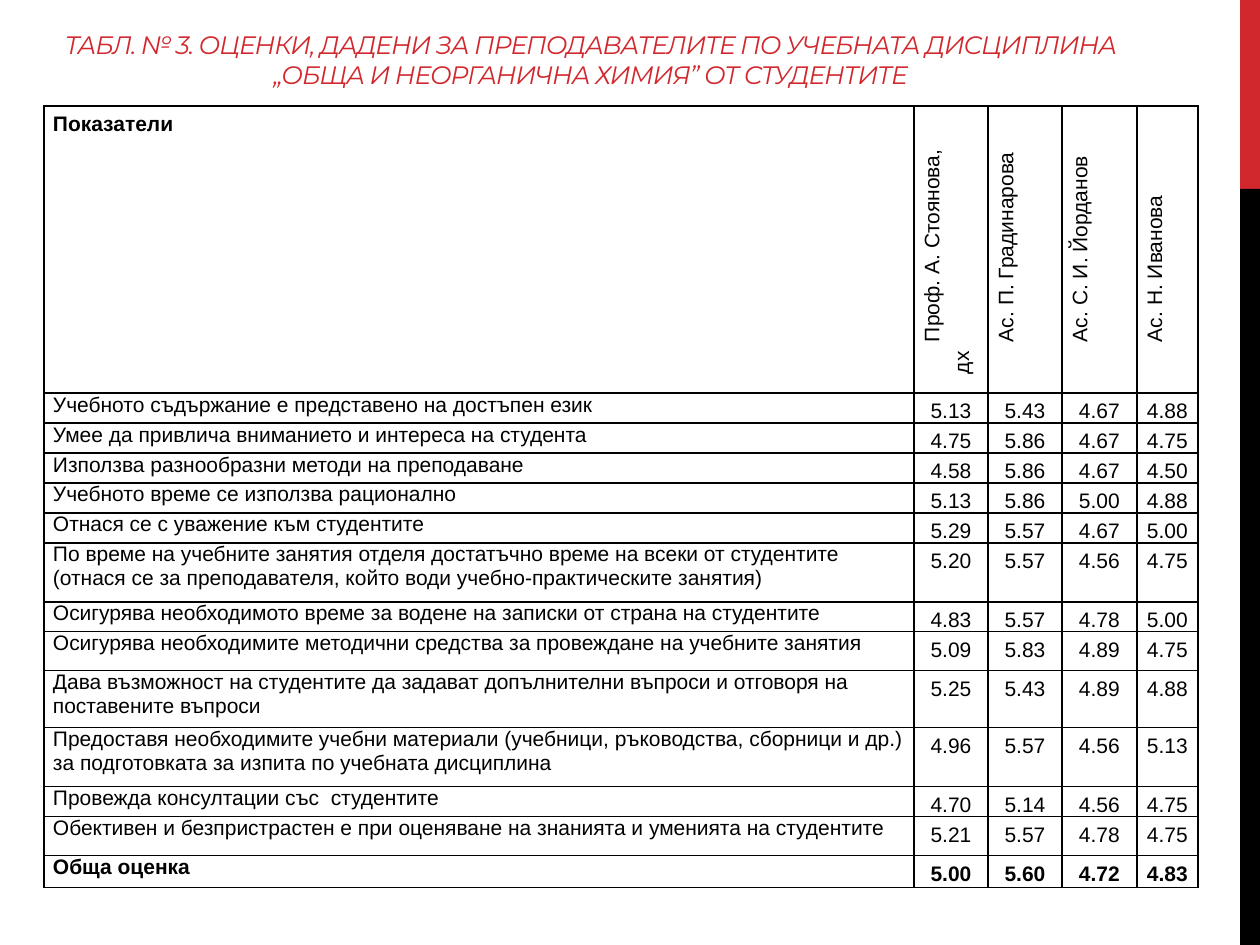
"""Build a slide with a table of students' ratings of their teachers."""
from pptx import Presentation
from pptx.dml.color import RGBColor
from pptx.enum.shapes import MSO_SHAPE
from pptx.enum.text import MSO_ANCHOR, MSO_AUTO_SIZE, PP_ALIGN
from pptx.oxml import parse_xml
from pptx.oxml.ns import nsdecls
from pptx.util import Pt

PX = 914400 / 126
RECT = MSO_SHAPE.RECTANGLE
BOTTOM = MSO_ANCHOR.BOTTOM
FIXED = MSO_AUTO_SIZE.NONE
CENTER, JUSTIFY = PP_ALIGN.CENTER, PP_ALIGN.JUSTIFY
COLORS = {"red": "D1282E", "black": "000000"}

TITLE = ("ТАБЛ. № 3. ОЦЕНКИ, ДАДЕНИ ЗА ПРЕПОДАВАТЕЛИТЕ ПО УЧЕБНАТА ДИСЦИПЛИНА "
         "„ОБЩА И НЕОРГАНИЧНА ХИМИЯ” ОТ СТУДЕНТИТЕ")
HEADS = ["Показатели", "Проф. А. Стоянова, дх", "Ас. П. Градинарова",
         "Ас. С. И. Йорданов", "Ас. Н. Иванова"]
HEAD_HIGH = 287
COLS = [870, 74, 74, 75, 61]
RATINGS = [
    (30, "Учебното съдържание е представено на достъпен език", "5.13 5.43 4.67 4.88"),
    (30, "Умее да привлича вниманието и интереса на студента", "4.75 5.86 4.67 4.75"),
    (30, "Използва разнообразни методи на преподаване", "4.58 5.86 4.67 4.50"),
    (30, "Учебното време се използва рационално", "5.13 5.86 5.00 4.88"),
    (30, "Отнася се с уважение към студентите", "5.29 5.57 4.67 5.00"),
    (59, "По време на учебните занятия отделя достатъчно време на всеки от студентите "
         "(отнася се за преподавателя, който води учебно-практическите занятия)",
     "5.20 5.57 4.56 4.75"),
    (30, "Осигурява необходимото време за водене на записки от страна на студентите",
     "4.83 5.57 4.78 5.00"),
    (39, "Осигурява необходимите методични средства за провеждане на учебните занятия",
     "5.09 5.83 4.89 4.75"),
    (57, "Дава възможност на студентите да задават допълнителни въпроси и отговоря на "
         "поставените въпроси", "5.25 5.43 4.89 4.88"),
    (59, "Предоставя необходимите учебни материали (учебници, ръководства, сборници и др.) "
         "за подготовката за изпита по учебната дисциплина", "4.96 5.57 4.56 5.13"),
    (30, "Провежда консултации със  студентите", "4.70 5.14 4.56 4.75"),
    (39, "Обективен и безпристрастен е при оценяване на знанията и уменията на студентите",
     "5.21 5.57 4.78 4.75"),
    (32, "Обща оценка", "5.00 5.60 4.72 4.83"),
]


def px(num):
    """Turn px into EMU."""
    return round(num * PX)


def style(font, face, size, color):
    """Set the face, size and colour of a font."""
    font.name, font.size = face, Pt(size)
    font.color.rgb = RGBColor.from_string(COLORS[color])


def add_band(slide, box):
    """Draw the side band, red above black."""
    left, top, wide, high = box
    cut = high // 5
    for color, start, size in (("red", 0, cut), ("black", cut, high - cut)):
        bar = slide.shapes.add_shape(RECT, px(left), px(top + start), px(wide), px(size))
        bar.shadow.inherit = False
        bar.fill.solid()
        bar.fill.fore_color.rgb = RGBColor.from_string(COLORS[color])
        bar.line.fill.background()


def add_title(slide, box):
    """Place and format the title."""
    title = slide.shapes.title
    title.left, title.top, title.width, title.height = map(px, box)
    frame = title.text_frame
    frame.text = TITLE
    frame.word_wrap, frame.auto_size = True, FIXED
    frame.vertical_anchor = BOTTOM
    para = frame.paragraphs[0]
    para.alignment = CENTER
    run = para.runs[0]
    style(run.font, "Montserrat", 14.4, "red")
    run.font.italic = True
    run.font._element.set("spc", "-60")


def add_edges(cell):
    """Give a cell thin black borders and no fill."""
    props = cell._tc.get_or_add_tcPr()
    for side in "LRTB":
        props.append(parse_xml(
            f'<a:ln{side} {nsdecls("a")} w="12700"><a:solidFill>'
            f'<a:srgbClr val="{COLORS["black"]}"/></a:solidFill></a:ln{side}>'))
    cell.fill.background()


def turn(cell):
    """Stand the text of a head cell upright, with its indents."""
    cell._tc.get_or_add_tcPr().set("vert", "vert270")
    props = cell.text_frame.paragraphs[0]._p.get_or_add_pPr()
    for name, size in (("marL", 10), ("marR", 10), ("indent", 32)):
        props.set(name, str(px(size)))


def fill_cell(cell, text, row, col):
    """Write one cell and format it by its place in the table."""
    cell.text_frame.text = text
    cell.margin_left = cell.margin_right = px(9)
    cell.margin_top = cell.margin_bottom = 0
    para = cell.text_frame.paragraphs[0]
    if row == 0 or col:
        para.line_spacing = Pt(17)
    if row and col:
        para.alignment = CENTER
    elif row == 0 and col:
        turn(cell)
    elif row == 0:
        para.alignment = JUSTIFY
    font = para.runs[0].font
    style(font, "Arial", 12, "black")
    font.bold = row == len(RATINGS) or row == col == 0
    add_edges(cell)


def add_ratings(slide, left, top):
    """Build the table of ratings."""
    rows = [HEADS] + [[name, *marks.split()] for _, name, marks in RATINGS]
    highs = [HEAD_HIGH] + [high for high, _, _ in RATINGS]
    table = slide.shapes.add_table(len(rows), len(COLS), px(left), px(top),
                                   px(sum(COLS)), px(sum(highs))).table
    table.first_row = table.horz_banding = False
    for line, wide in zip(table.columns, COLS):
        line.width = px(wide)
    for row, (texts, high) in enumerate(zip(rows, highs)):
        table.rows[row].height = px(high)
        for col, text in enumerate(texts):
            fill_cell(table.cell(row, col), text, row, col)


def main():
    """Build and save the slide."""
    deck = Presentation()
    deck.slide_width, deck.slide_height = px(1260), px(945)
    slide = deck.slides.add_slide(deck.slide_layouts[5])
    add_band(slide, (1240, 0, 20, 945))
    add_title(slide, (25, 26, 1131, 70))
    add_ratings(slide, 44, 106)
    deck.save("out.pptx")


if __name__ == "__main__":
    main()
